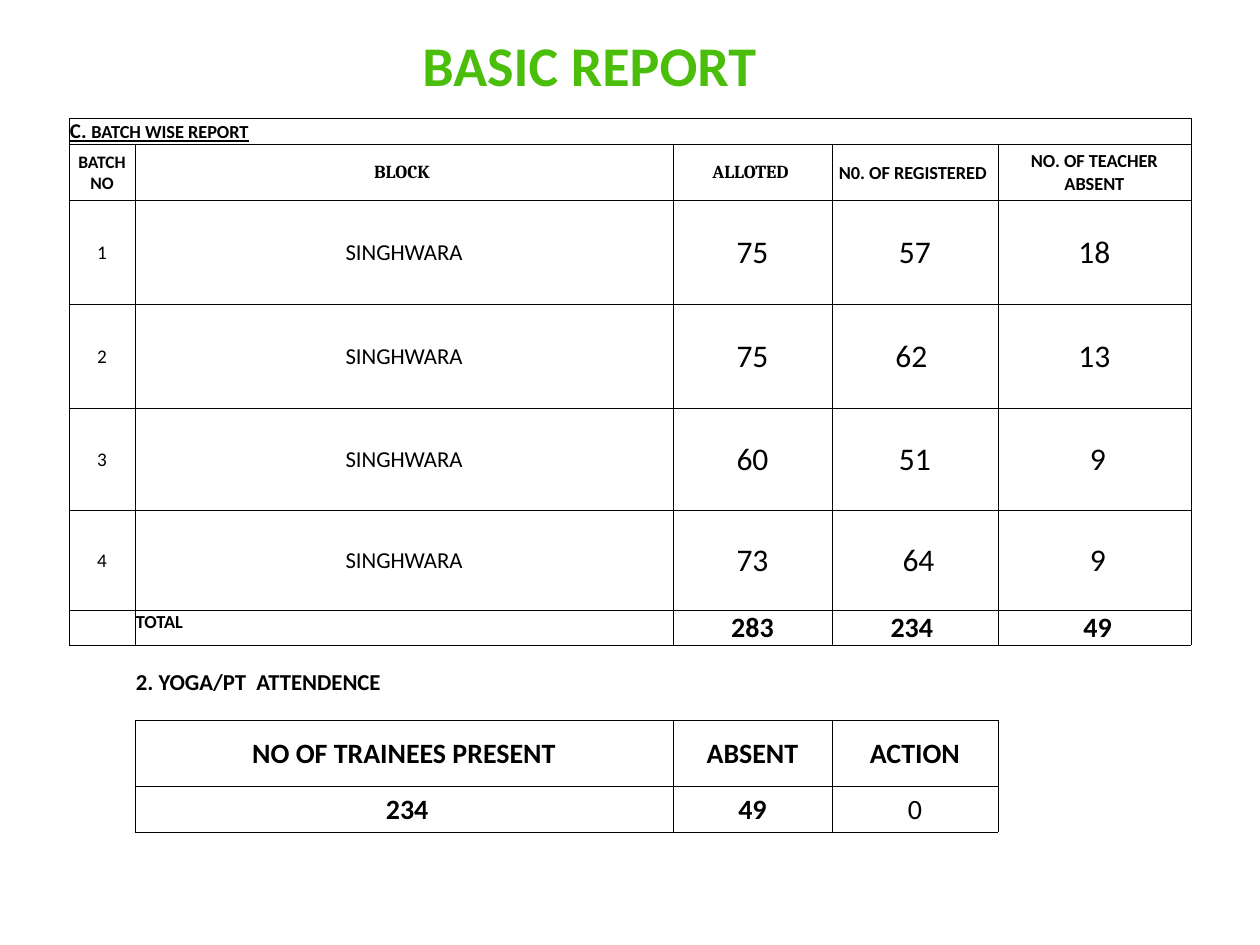
import pptx
import pptx.dml.color
import pptx.enum.text
import pptx.oxml.ns
import pptx.util
import lxml.etree

PX = 914400 // 126
ALIGN = pptx.enum.text.PP_ALIGN
ANCHOR = pptx.enum.text.MSO_ANCHOR


class Theme:
    green, black, white = (
        pptx.dml.color.RGBColor.from_string(c) for c in ("4ABE0A", "000000", "FFFFFF"))
    line = pptx.util.Pt(0.5)
    styles = {
        "title": dict(size=32, bold=True, color=green),
        "section": dict(size=12, bold=True, underline=True),
        "section_name": dict(size=10.5, bold=True, underline=True),
        "batch_head": dict(size=10, bold=True),
        "serif_head": dict(size=10.5, bold=True, name="Cambria"),
        "head": dict(size=10.5, bold=True),
        "batch": dict(size=11),
        "block": dict(size=13),
        "count": dict(size=18),
        "total": dict(size=16, bold=True),
        "subtitle": dict(size=13, bold=True),
        "plain_total": dict(size=16),
    }


COLUMNS = [66, 538, 159, 166, 193]
ROWS = [26, 56, 104, 104, 102, 100, 35, 19, 37, 19, 66, 46]
HEADINGS = ["BATCH NO", "BLOCK ", "ALLOTED ", "N0. OF REGISTERED ", "NO. OF TEACHER ABSENT"]
HEADING_STYLES = ["batch_head", "serif_head", "serif_head", "head", "head"]
BATCHES = [
    ["1", "SINGHWARA", "75", "57", "18"],
    ["2", "SINGHWARA", "75", "62 ", "13"],
    ["3", "SINGHWARA", "60", "51", " 9"],
    ["4", "SINGHWARA", "73", " 64", " 9"],
]
BATCH_STYLES = ["batch", "block", "count", "count", "count"]
TOTALS = ["283", "234 ", " 49"]
TOTAL_ROW, SUBTITLE_ROW, YOGA_ROW = 6, 8, 10
YOGA = [["NO OF TRAINEES PRESENT", "ABSENT", "ACTION"], [" 234", "49", "0"]]


def add_span(para, text, style):
    span = para.add_run()
    span.text = text
    values = {"name": "Calibri", "bold": False, "color": Theme.black, **Theme.styles[style]}
    span.font.color.rgb = values.pop("color")
    values["size"] = pptx.util.Pt(values["size"])
    for key, value in values.items():
        setattr(span.font, key, value)


def add_title(page, left, top, width, height):
    box = page.shapes.add_textbox(left * PX, top * PX, width * PX, height * PX)
    box.text_frame.word_wrap = True
    box.text_frame.vertical_anchor = ANCHOR.MIDDLE
    para = box.text_frame.paragraphs[0]
    para.alignment = ALIGN.CENTER
    add_span(para, "BASIC REPORT", "title")


def is_framed(row, column):
    """The batch grid fills the top rows, the yoga grid the inner columns below."""
    return (0 <= row <= TOTAL_ROW and 0 <= column < len(COLUMNS)
            or YOGA_ROW <= row < len(ROWS) and 1 <= column <= 3)


def set_borders(cell, row, column):
    properties = cell._tc.get_or_add_tcPr()
    sides = {"L": (0, -1), "R": (0, 1), "T": (-1, 0), "B": (1, 0)}
    for side, (down, across) in sides.items():
        line = lxml.etree.SubElement(
            properties, pptx.oxml.ns.qn("a:ln" + side), w=str(Theme.line))
        if is_framed(row, column) or is_framed(row + down, column + across):
            fill = lxml.etree.SubElement(line, pptx.oxml.ns.qn("a:solidFill"))
            lxml.etree.SubElement(fill, pptx.oxml.ns.qn("a:srgbClr"), val=str(Theme.black))
        else:
            lxml.etree.SubElement(line, pptx.oxml.ns.qn("a:noFill"))


def format_cell(cell, row, column):
    set_borders(cell, row, column)
    cell.fill.solid()
    cell.fill.fore_color.rgb = Theme.white
    margins = dict(margin_left=PX, margin_right=PX, margin_top=PX, margin_bottom=0)
    for key, value in margins.items():
        setattr(cell, key, value)


def fill_cell(cell, spans, align=ALIGN.CENTER, anchor=ANCHOR.MIDDLE):
    cell.vertical_anchor = anchor
    para = cell.text_frame.paragraphs[0]
    para.alignment = align
    for text, style in spans:
        add_span(para, text, style)


def fill_batches(table):
    fill_cell(table.cell(0, 0), [("C. ", "section"), ("BATCH WISE REPORT", "section_name")],
              ALIGN.LEFT, ANCHOR.BOTTOM)
    for row, texts in enumerate([HEADINGS] + BATCHES, 1):
        styles = HEADING_STYLES if row == 1 else BATCH_STYLES
        for column, span in enumerate(zip(texts, styles)):
            fill_cell(table.cell(row, column), [span])
    fill_cell(table.cell(TOTAL_ROW, 1), [("TOTAL", "head")], ALIGN.LEFT, ANCHOR.TOP)
    for column, text in enumerate(TOTALS, 2):
        fill_cell(table.cell(TOTAL_ROW, column), [(text, "total")])


def fill_yoga(table):
    fill_cell(table.cell(SUBTITLE_ROW, 1), [("2. YOGA/PT  ATTENDENCE", "subtitle")], ALIGN.LEFT)
    for row, texts in enumerate(YOGA, YOGA_ROW):
        for column, text in enumerate(texts, 1):
            style = "plain_total" if text == "0" else "total"
            fill_cell(table.cell(row, column), [(text, style)])


def add_report(page, left, top):
    table = page.shapes.add_table(
        len(ROWS), len(COLUMNS), left * PX, top * PX, sum(COLUMNS) * PX, sum(ROWS) * PX).table
    table.first_row = table.horz_banding = False
    for column, width in zip(table.columns, COLUMNS):
        column.width = width * PX
    for row, height in zip(table.rows, ROWS):
        row.height = height * PX
    for row in range(len(ROWS)):
        for column in range(len(COLUMNS)):
            format_cell(table.cell(row, column), row, column)
    table.cell(0, 0).merge(table.cell(0, 4))
    table.cell(SUBTITLE_ROW, 1).merge(table.cell(SUBTITLE_ROW, 3))
    fill_batches(table)
    fill_yoga(table)
    # Small type in empty cells keeps the thin rows thin
    for cell in table.iter_cells():
        if not cell.text_frame.text:
            para = cell.text_frame.paragraphs[0]
            lxml.etree.SubElement(para._p, pptx.oxml.ns.qn("a:endParaRPr"), sz="600")


def main():
    deck = pptx.Presentation()
    deck.slide_width, deck.slide_height = pptx.util.Inches(10), pptx.util.Inches(7.5)
    page = deck.slides.add_slide(deck.slide_layouts[6])
    add_title(page, 54, 20, 1071, 88)
    add_report(page, 69, 118)
    deck.save("out.pptx")


if __name__ == "__main__":
    main()
